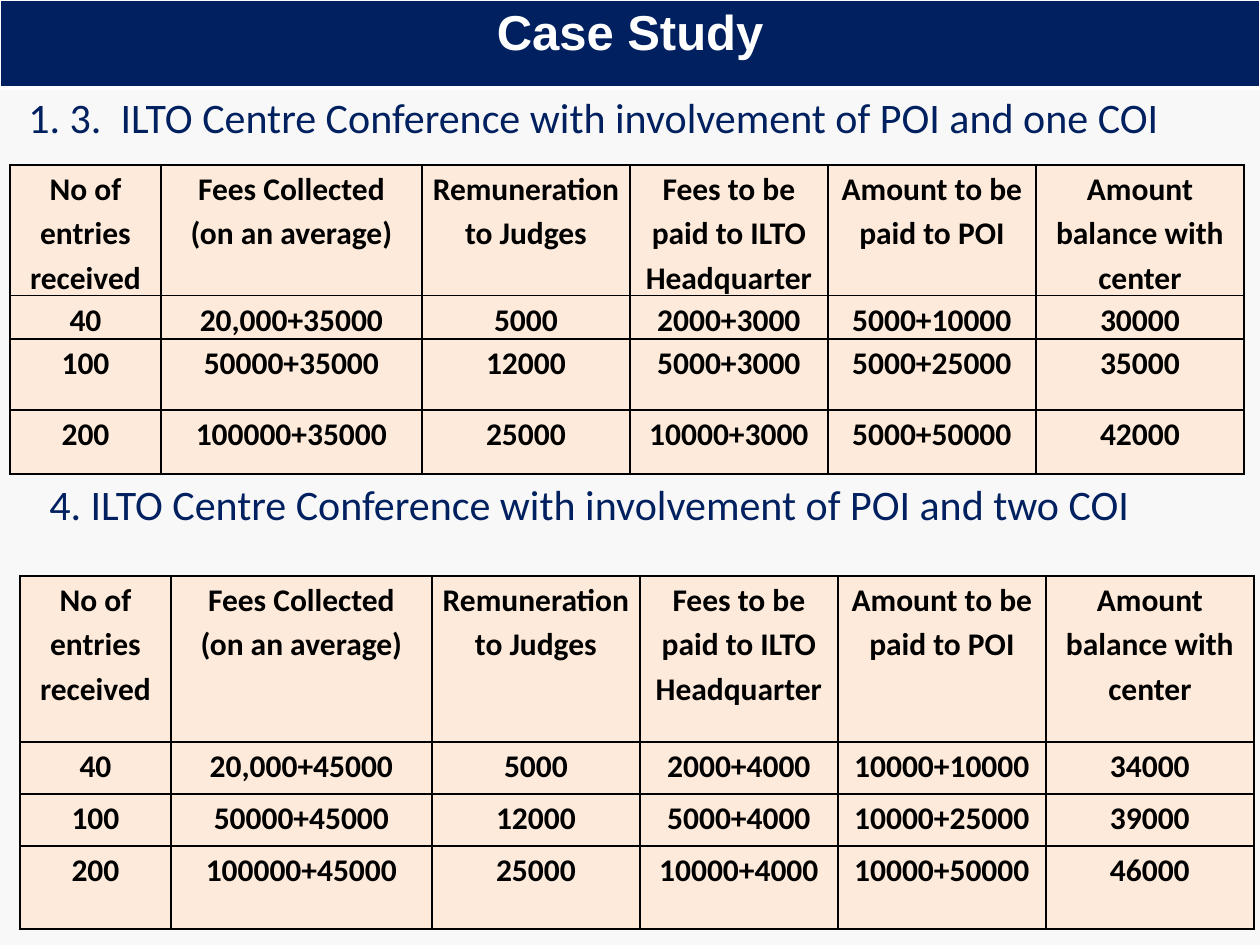
from lxml import etree
from pptx import Presentation
from pptx.dml.color import RGBColor
from pptx.enum.text import MSO_AUTO_SIZE, PP_ALIGN
from pptx.oxml.ns import qn
from pptx.util import Emu, Pt

CENTER, LEFT = PP_ALIGN.CENTER, PP_ALIGN.LEFT
GROW = MSO_AUTO_SIZE.SHAPE_TO_FIT_TEXT
EMU_PER_PX = 914400 / 126
COLORS = {
    "page": "F8F8F8",
    "navy": "002060",
    "white": "FFFFFF",
    "black": "000000",
    "peach": "FDEADA",
}
COLUMN_WIDTHS = [151, 261, 208, 198, 208, 208]
HEADER = [
    "No of entries received",
    "Fees Collected\n(on an average)",
    "Remuneration to Judges",
    "Fees to be paid to ILTO Headquarter",
    "Amount to be paid to POI",
    "Amount balance with center",
]
ONE_COI_ROWS = [
    ["40", "20,000+35000", "5000", "2000+3000", "5000+10000", "30000"],
    ["100", "50000+35000", "12000", "5000+3000", "5000+25000", "35000"],
    ["200", "100000+35000", "25000", "10000+3000", "5000+50000", "42000"],
]
TWO_COI_ROWS = [
    ["40", "20,000+45000", "5000", "2000+4000", "10000+10000", "34000"],
    ["100", "50000+45000", "12000", "5000+4000", "10000+25000", "39000"],
    ["200", "100000+45000", "25000", "10000+4000", "10000+50000", "46000"],
]


def px(length):
    """Turn pixels into EMU."""
    return Emu(round(length * EMU_PER_PX))


def rgb(name):
    """Return a named colour."""
    return RGBColor.from_string(COLORS[name])


def write_text(frame, text, *, size, color, font="Calibri", bold=False,
               align=LEFT, line_spacing=1.0, space_after=0, indent=None):
    """Fill a text frame with one formatted paragraph per line."""
    for index, line in enumerate(text.split("\n")):
        para = frame.add_paragraph() if index else frame.paragraphs[0]
        para.alignment = align
        para.line_spacing = line_spacing
        para.space_after = Pt(space_after)
        if indent:
            properties = para._p.get_or_add_pPr()
            properties.set("marL", str(px(indent[0])))
            properties.set("indent", str(px(indent[1])))
        span = para.add_run()
        span.text = line
        span.font.name = font
        span.font.size = Pt(size)
        span.font.bold = bold
        span.font.color.rgb = rgb(color)


def set_borders(cell, color, bottom_width):
    """Draw the four borders of a cell, one point wide except the bottom."""
    properties = cell._tc.get_or_add_tcPr()
    for side in "LRTB":
        width = bottom_width if side == "B" else 1
        border = etree.SubElement(properties, qn(f"a:ln{side}"), w=str(Pt(width)))
        fill = etree.SubElement(border, qn("a:solidFill"))
        etree.SubElement(fill, qn("a:srgbClr"), val=COLORS[color])


def add_grid(page, left, top, widths, heights, rows, *, fill, border, margins,
             bottom_width=1, **text_format):
    """Add a table with a uniform fill, border and text format."""
    table = page.shapes.add_table(
        len(rows), len(widths), px(left), px(top), px(sum(widths)), px(sum(heights))
    ).table
    table.first_row = table.horz_banding = False
    for column, width in zip(table.columns, widths):
        column.width = px(width)
    for row, height, texts in zip(table.rows, heights, rows):
        row.height = px(height)
        for cell, text in zip(row.cells, texts):
            cell.margin_left = cell.margin_right = px(margins[0])
            cell.margin_top = cell.margin_bottom = px(margins[1])
            set_borders(cell, border, bottom_width)
            cell.fill.solid()
            cell.fill.fore_color.rgb = rgb(fill)
            write_text(cell.text_frame, text, align=CENTER, bold=True, **text_format)


def add_title_band(page, text):
    """Add the title band across the top."""
    add_grid(page, 0, 0, [1260], [88], [[text]], fill="navy", border="white",
             margins=(13, 6), bottom_width=3, size=28, color="white", font="Arial")


def add_heading(page, left, top, text):
    """Add a section heading."""
    box = page.shapes.add_textbox(px(left), px(top), px(1235), px(54))
    box.text_frame.word_wrap = True
    box.text_frame.auto_size = GROW
    write_text(box.text_frame, text, size=24, color="navy", line_spacing=0.8,
               space_after=6, indent=(79, -63))


def add_fee_table(page, left, top, heights, rows):
    """Add a fee table under the shared header."""
    add_grid(page, left, top, COLUMN_WIDTHS, heights, [HEADER] + rows,
             fill="peach", border="black", margins=(9, 0), size=18,
             color="black", line_spacing=1.15)


def main():
    """Build the case study slide."""
    deck = Presentation()
    deck.slide_width, deck.slide_height = px(1260), px(945)
    page = deck.slides.add_slide(deck.slide_layouts[6])
    page.background.fill.solid()
    page.background.fill.fore_color.rgb = rgb("page")
    add_title_band(page, "Case Study")
    add_heading(page, 0, 95,
                "1. 3.  ILTO Centre Conference with involvement of POI and one COI")
    add_heading(page, 21, 482,
                "4. ILTO Centre Conference with involvement of POI and two COI")
    add_fee_table(page, 20, 576, [166, 52, 52, 83], TWO_COI_ROWS)
    add_fee_table(page, 10, 165, [130, 43, 71, 64], ONE_COI_ROWS)
    deck.save("out.pptx")


if __name__ == "__main__":
    main()
